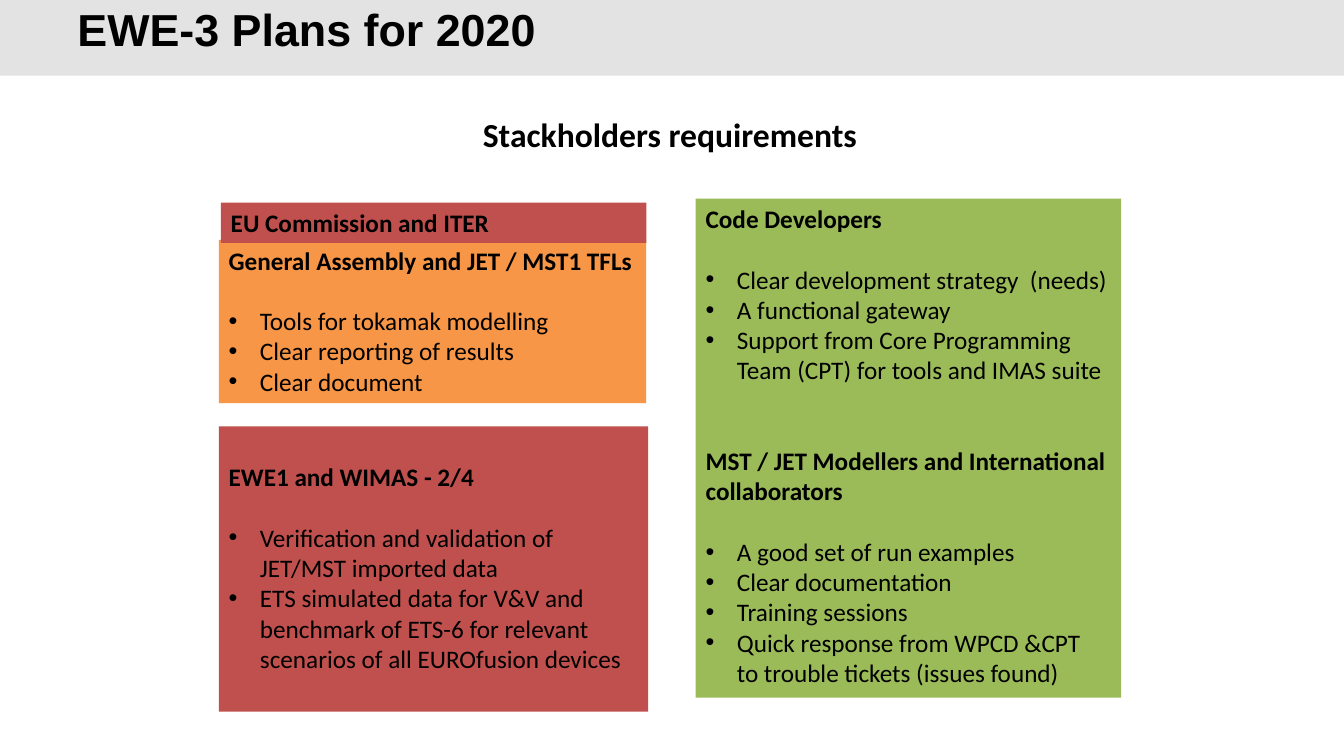
from pptx import Presentation
from pptx.dml.color import RGBColor as Rgb
from pptx.enum.shapes import MSO_SHAPE as Kind
from pptx.enum.text import MSO_ANCHOR as Anchor, PP_ALIGN as Align
from pptx.util import Emu, Pt
from lxml.etree import SubElement as Sub
from pptx.oxml.ns import qn

SCALE = 9144  # 100 px to the inch
LINE = 21.6   # height of one body line, in points
RED, ORANGE, GREEN, GREY = "C0504D", "F79646", "9BBB59", "E3E3E3"


def px(n):
    return Emu(n * SCALE)


def color(code):
    return Rgb.from_string(code)


def write(para, text, size=18, face="Calibri", bold=False, ink="000000",
          bullet=False, gap=0, pitch=None):
    """Fill one paragraph and format its runs."""
    para.alignment = Align.LEFT
    if gap:
        para.space_before = Pt(gap * LINE)
    if pitch:
        para.line_spacing = Pt(pitch)
    if bullet:
        props = para._p.get_or_add_pPr()
        props.set("marL", str(px(31)))
        props.set("indent", str(-px(31)))
        Sub(props, qn("a:buFont"), typeface="Arial")
        Sub(props, qn("a:buChar"), char="•")
    para.text = text
    for run in para.runs:
        font = run.font
        font.name, font.size, font.bold = face, Pt(size), bold
        font.color.rgb = color(ink)


class Deck:
    def __init__(self, wide, high):
        self.file = Presentation()
        self.file.slide_width, self.file.slide_height = px(wide), px(high)
        self.slide = self.file.slides.add_slide(self.file.slide_layouts[6])

    def rect(self, x, y, w, h, fill):
        shape = self.slide.shapes.add_shape(
            Kind.RECTANGLE, px(x), px(y), px(w), px(h))
        shape.shadow.inherit = False
        shape.fill.solid()
        shape.fill.fore_color.rgb = color(fill)
        shape.line.fill.background()
        return shape

    def label(self, x, y, w, h, text, wrap=True, anchor=Anchor.TOP, **style):
        frame = self.slide.shapes.add_textbox(
            px(x), px(y), px(w), px(h)).text_frame
        frame.word_wrap, frame.vertical_anchor = wrap, anchor
        write(frame.paragraphs[0], text, bold=True, **style)

    def panel(self, x, y, w, h, fill, groups, top=5):
        """Draw a filled box of bold heads, each with its bullet list."""
        frame = self.rect(x, y, w, h, fill).text_frame
        frame.word_wrap, frame.vertical_anchor = True, Anchor.TOP
        frame.margin_top = px(top)
        for i, (head, items) in enumerate(groups):
            para = frame.add_paragraph() if i else frame.paragraphs[0]
            write(para, head, bold=True, gap=2 if i else 0)
            for j, item in enumerate(items):
                write(frame.add_paragraph(), item, bullet=True,
                      gap=0 if j else 1)


def main():
    deck = Deck(1333, 750)

    # Title band and subtitle
    deck.rect(0, 0, 1333, 75, GREY)
    deck.label(67, 8, 1100, 50, "EWE-3 Plans for 2020", anchor=Anchor.MIDDLE,
               size=32, face="Arial", pitch=32)
    deck.label(469, 108, 395, 50, "Stackholders requirements",
               wrap=False, size=24)

    # Stakeholder panels
    deck.panel(217, 238, 424, 162, ORANGE, [
        ("General Assembly and JET / MST1 TFLs", [
            "Tools for tokamak modelling",
            "Clear reporting of results",
            "Clear document"])])
    deck.panel(690, 197, 422, 495, GREEN, [
        ("Code Developers", [
            "Clear development strategy  (needs)",
            "A functional gateway",
            "Support from Core Programming Team (CPT) for tools "
            "and IMAS suite"]),
        ("MST / JET Modellers and International collaborators", [
            "A good set of run examples",
            "Clear documentation",
            "Training sessions",
            "Quick response from WPCD &CPT\n"
            "to trouble tickets (issues found)"])])
    deck.panel(217, 423, 426, 283, RED, [
        ("EWE1 and WIMAS - 2/4", [
            "Verification and validation of JET/MST imported data",
            "ETS simulated data for V&V and benchmark of ETS-6 "
            "for relevant scenarios of all EUROfusion devices"])], top=35)
    deck.panel(219, 201, 422, 40, RED, [("EU Commission and ITER", [])])

    deck.file.save("out.pptx")


if __name__ == "__main__":
    main()
